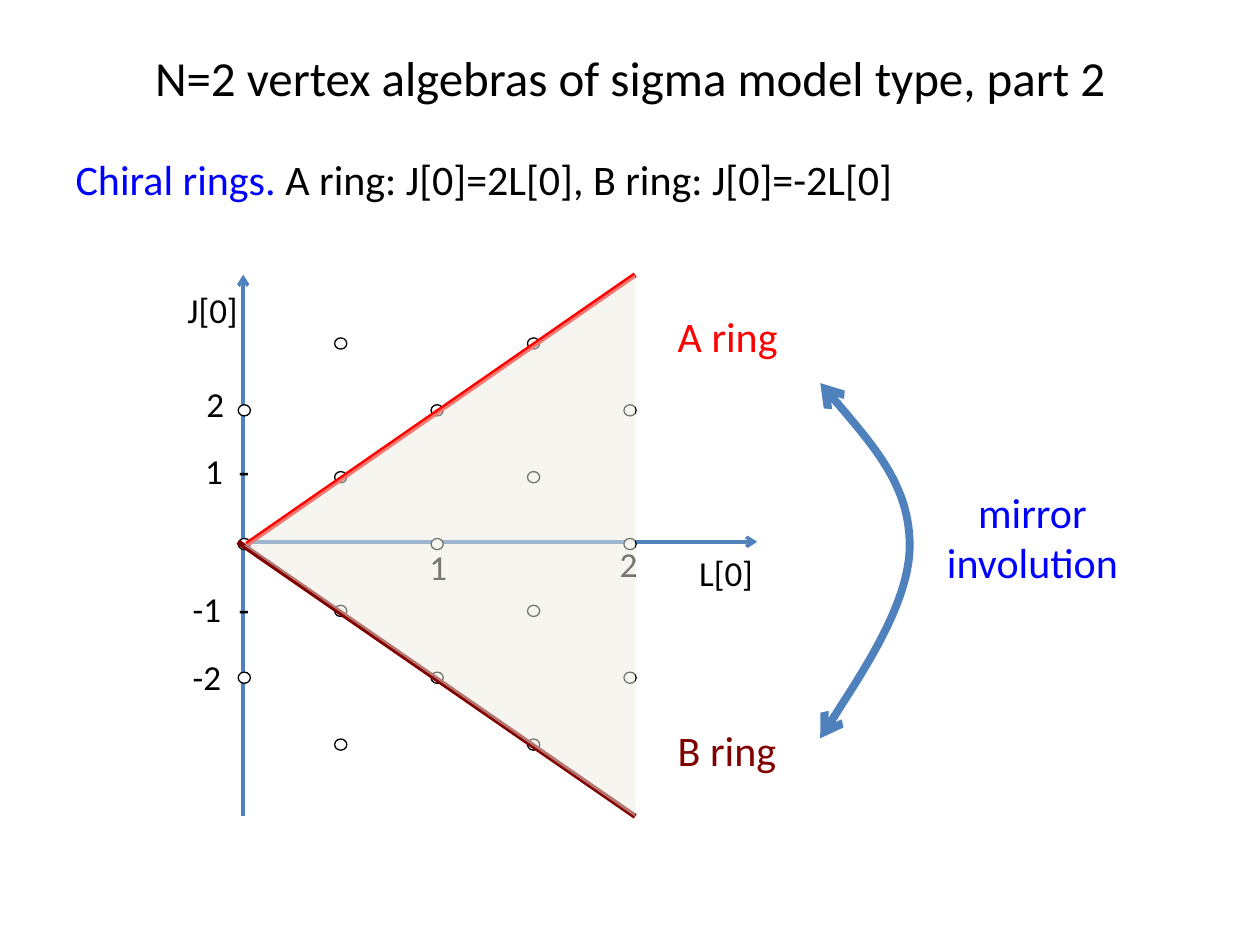
from pptx import Presentation
from pptx.dml.color import RGBColor
from pptx.enum.shapes import MSO_CONNECTOR as Connector, MSO_SHAPE as Shape
from pptx.enum.text import MSO_ANCHOR as Anchor, PP_ALIGN as Align
from pptx.oxml.ns import qn
from pptx.util import Pt
from lxml.etree import SubElement

THEME = {
    "font": "Calibri", "title": 28, "body": 24, "label": 20,
    "black": "000000", "blue": "0000FF", "red": "FF0000", "maroon": "800000",
    "axis": "4F81BD", "cone": "EEECE1", "white": "FFFFFF",
}
TITLE = "N=2 vertex algebras of sigma model type, part 2"
BODY = [("Chiral rings. ", "blue"), ("A ring: J[0]=2L[0], B ring: J[0]=-2L[0]", "black")]
AXES = [((139, 466.5), (139, 157)), ((139.5, 309.6), (432.7, 309.6))]
RINGS = [("red", (141, 311), (363, 157)), ("maroon", (136, 309.6), (363, 466.5))]
LABELS = [
    ("J[0]", 100, 161.3), ("L[0]", 392.4, 311.8),
    ("2", 110.9, 215.3), ("1\t-", 110.2, 253.4), ("-1\t-", 103, 331.9), ("-2", 103, 370.8),
    ("1", 238.3, 308.2), ("2", 347, 306.7),
]
TICK_X = 136.5
RING_LABELS = [("A ring", 380.2, 174.2, "red"), ("B ring", 380.2, 410.4, "maroon")]
MIRROR = ("mirror\ninvolution", 533.5, 274.3)
ARC_START = (468.7, 218.9)
ARC_CURVE = [(493.9, 248.4), (519.8, 277.9), (519.8, 311.8),
             (519.8, 345.6), (468.7, 421.9), (468.7, 421.9)]
ORIGIN = (139.6, 310.9)
STEP = (55.1, 38.2)
DOT = (7, 6.4)
MAX_CHARGE, MAX_HALF_WEIGHT = 3, 4


def color(name):
    return RGBColor.from_string(THEME[name])


def points(*values):
    return [Pt(value) for value in values]


def style_run(run, size, ink):
    run.font.name = THEME["font"]
    run.font.size = Pt(THEME[size])
    run.font.color.rgb = color(ink)


def style_line(shape, ink, width):
    shape.line.color.rgb = color(ink)
    shape.line.width = Pt(width)


def add_arrowheads(shape, *ends):
    for end in ends:
        SubElement(shape.line._get_or_add_ln(), qn("a:" + end), type="arrow")


def place(shape, left, top, width, height):
    shape.left, shape.top, shape.width, shape.height = points(left, top, width, height)


def add_line(page, start, end, ink, width):
    line = page.shapes.add_connector(Connector.STRAIGHT, *points(*start, *end))
    style_line(line, ink, width)
    SubElement(line._element.spPr, qn("a:effectLst"))
    return line


def add_text(page, text, left, top, width, height, size, ink, align=Align.LEFT):
    box = page.shapes.add_textbox(*points(left, top, width, height))
    box.text_frame.word_wrap = True
    box.text_frame.text = text
    for para in box.text_frame.paragraphs:
        para.alignment = align
        for run in para.runs:
            style_run(run, size, ink)
    return box


def add_label(page, text, left, top):
    box = add_text(page, text, left, top, 52, 31.7, "label", "black")
    if "\t" in text:
        properties = box.text_frame.paragraphs[0]._p.get_or_add_pPr()
        tabs = SubElement(properties, qn("a:tabLst"))
        offset = Pt(TICK_X - left - 7.2)
        SubElement(tabs, qn("a:tab"), pos=str(int(offset)), algn="l")


def fill_placeholders(page):
    title = page.shapes.title
    place(title, 36, 21.6, 648, 44.6)
    title.text_frame.text = TITLE
    title.text_frame.vertical_anchor = Anchor.MIDDLE
    title.text_frame.paragraphs[0].alignment = Align.CENTER
    style_run(title.text_frame.paragraphs[0].runs[0], "title", "black")

    body = page.placeholders[1]
    place(body, 36, 84.2, 669.6, 435.6)
    para = body.text_frame.paragraphs[0]
    for text, ink in BODY:
        run = para.add_run()
        run.text = text
        style_run(run, "body", ink)
    properties = para._p.get_or_add_pPr()
    properties.set("marL", str(int(Pt(27))))
    properties.set("indent", str(int(Pt(-27))))
    SubElement(properties, qn("a:buNone"))


def add_lattice(page):
    for charge in range(MAX_CHARGE, -MAX_CHARGE - 1, -1):
        for half_weight in range(MAX_HALF_WEIGHT + 1):
            if (charge + half_weight) % 2:
                continue
            left = ORIGIN[0] + half_weight * STEP[0] - DOT[0] / 2
            top = ORIGIN[1] - charge * STEP[1] - DOT[1] / 2
            dot = page.shapes.add_shape(Shape.OVAL, *points(left, top, *DOT))
            dot.shadow.inherit = False
            dot.fill.solid()
            dot.fill.fore_color.rgb = color("white")
            style_line(dot, "black", 0.75)


def add_cone(page):
    cone = page.shapes.add_shape(Shape.ISOSCELES_TRIANGLE, *points(96.5, 200.2, 309.6, 223.2))
    cone.rotation = 270
    cone.shadow.inherit = False
    cone.line.fill.background()
    cone.fill.solid()
    cone.fill.fore_color.rgb = color("cone")
    fill = cone._element.spPr.find(qn("a:solidFill"))
    SubElement(fill[0], qn("a:alpha"), val="50000")


def add_mirror_arc(page):
    builder = page.shapes.build_freeform(*points(*ARC_START))
    builder.add_line_segments([points(*point) for point in ARC_CURVE], close=False)
    arc = builder.convert_to_shape()
    segments = list(arc._element.iter(qn("a:lnTo")))
    outline = segments[0].getparent()
    for first in range(0, len(segments), 3):
        curve = SubElement(outline, qn("a:cubicBezTo"))
        for segment in segments[first:first + 3]:
            curve.append(segment[0])
            outline.remove(segment)
    arc.shadow.inherit = False
    arc.fill.background()
    style_line(arc, "axis", 4.5)
    add_arrowheads(arc, "headEnd", "tailEnd")


def main():
    deck = Presentation()
    deck.slide_width, deck.slide_height = points(720, 540)
    page = deck.slides.add_slide(deck.slide_layouts[1])
    fill_placeholders(page)
    for start, end in AXES:
        add_arrowheads(add_line(page, start, end, "axis", 2), "tailEnd")
    for label in LABELS:
        add_label(page, *label)
    add_lattice(page)
    for ink, start, end in RINGS:
        add_line(page, start, end, ink, 3)
    add_cone(page)
    for text, left, top, ink in RING_LABELS:
        add_text(page, text, left, top, 80, 36, "body", ink)
    add_mirror_arc(page)
    add_text(page, *MIRROR, 113, 65.5, "body", "blue", Align.CENTER)
    deck.save("out.pptx")


if __name__ == "__main__":
    main()
